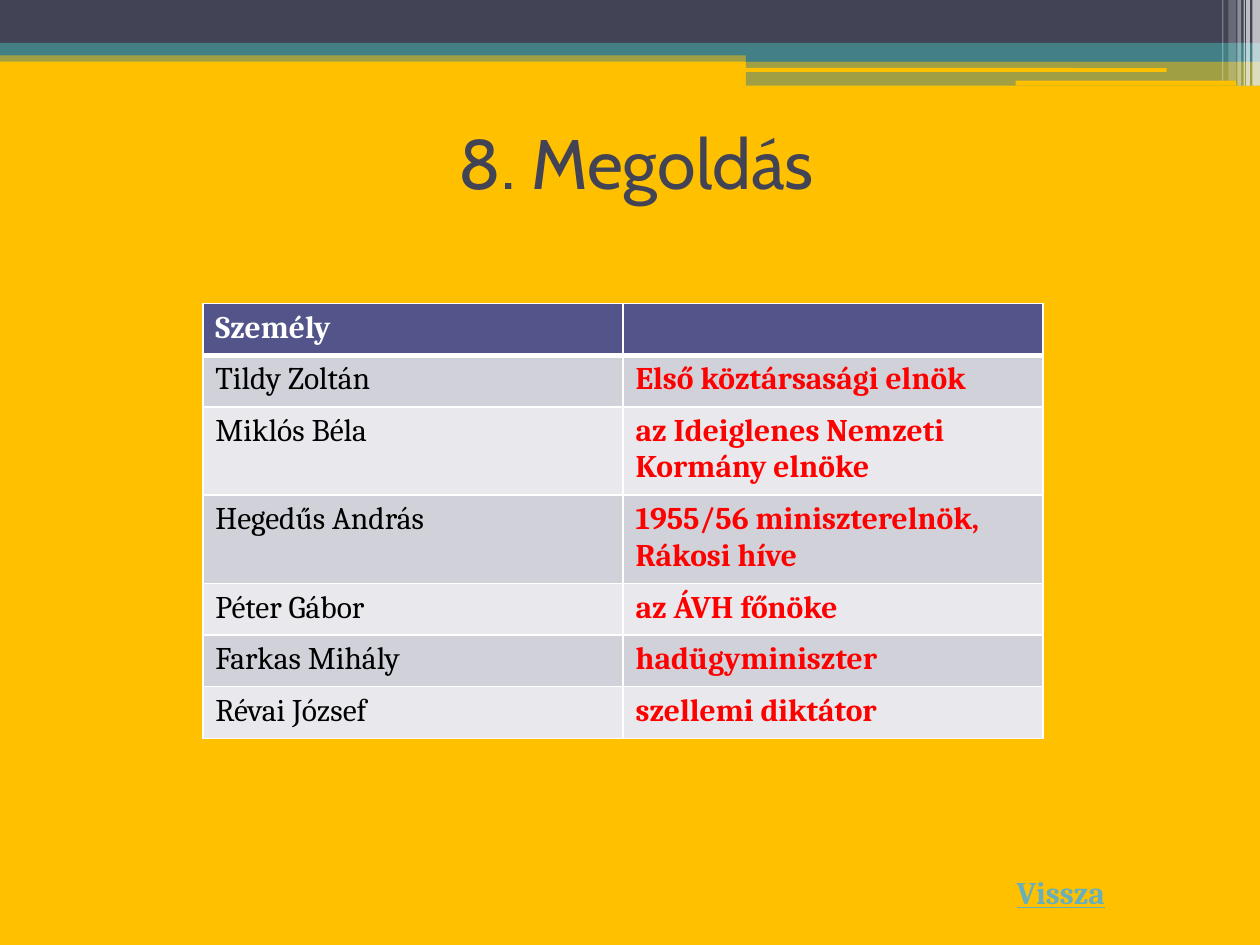
from lxml.etree import SubElement
from pptx import Presentation
from pptx.dml.color import RGBColor
from pptx.enum.shapes import MSO_SHAPE
from pptx.enum.text import MSO_ANCHOR, MSO_AUTO_SIZE, PP_ALIGN
from pptx.oxml.ns import qn
from pptx.util import Inches, Pt

DARK, TEAL, GOLD, WHITE = "424456", "438086", "FFC000", "FFFFFF"
BANDS = [
    (0, 0.4, 10, 0.09, TEAL, 50),
    (0, 0, 10, 0.34, DARK, 100),
    (0, 0.34, 10, 0.1, TEAL, 100),
    (5.92, 0.39, 4.08, 0.1, TEAL, 100),
    (5.92, 0.48, 4.08, 0.2, TEAL, 50),
]
PILLS = [(5.91, 0.54, 3.35, 0.03), (8.06, 0.64, 1.75, 0.04)]
STRIPES = [
    (9.94, 0.06, 0.68, 65),
    (9.89, 0.03, 0.68, 65),
    (9.87, 0.01, 0.68, 60),
    (9.82, 0.03, 0.68, 40),
    (9.75, 0.06, 0.64, 20),
    (9.7, 0.01, 0.64, 30),
]
ROWS = [
    ("Személy", ""),
    ("Tildy Zoltán", "Első köztársasági elnök"),
    ("Miklós Béla", "az Ideiglenes Nemzeti Kormány elnöke"),
    ("Hegedűs András", "1955/56 miniszterelnök, Rákosi híve"),
    ("Péter Gábor", "az ÁVH főnöke"),
    ("Farkas Mihály", "hadügyminiszter"),
    ("Révai József", "szellemi diktátor"),
]


def paint(fill, color, alpha=100):
    fill.solid()
    fill.fore_color.rgb = RGBColor.from_string(color)
    if alpha < 100:
        tint = fill._xPr.find(qn("a:solidFill"))[0]
        SubElement(tint, qn("a:alpha"), val=str(alpha * 1000))


def style(font, color, **form):
    for key, value in form.items():
        setattr(font, key, value)
    font.color.rgb = RGBColor.from_string(color)


def write(frame, text, color, **form):
    para = frame.paragraphs[0]
    run = para.add_run()
    run.text = text
    style(run.font, color, **form)
    return para


def block(slide, box, color, alpha=100, kind=MSO_SHAPE.RECTANGLE):
    shape = slide.shapes.add_shape(kind, *map(Inches, box))
    shape.shadow.inherit = False
    paint(shape.fill, color, alpha)
    shape.line.fill.background()


def banner(slide, left, top):
    for x, y, wide, high, color, alpha in BANDS:
        block(slide, (left + x, top + y, wide, high), color, alpha)
    for x, y, wide, high in PILLS:
        box = (left + x, top + y, wide, high)
        block(slide, box, GOLD, kind=MSO_SHAPE.ROUNDED_RECTANGLE)
    for x, wide, high, alpha in STRIPES:
        block(slide, (left + x, top, wide, high), WHITE, alpha)


def title(slide, box):
    frame = slide.shapes.add_textbox(*map(Inches, box)).text_frame
    frame.word_wrap = True
    frame.vertical_anchor = MSO_ANCHOR.MIDDLE
    para = write(frame, "8. Megoldás", DARK, name="Cabin", size=Pt(40))
    para.alignment = PP_ALIGN.CENTER


def back(slide, box):
    frame = slide.shapes.add_textbox(*map(Inches, box)).text_frame
    frame.word_wrap = False
    frame.auto_size = MSO_AUTO_SIZE.SHAPE_TO_FIT_TEXT
    write(frame, "Vissza", "67AFBD", name="Cambria", size=Pt(18),
          bold=True, underline=True)


def edge(cell, sides):
    props = cell._tc.get_or_add_tcPr()
    for spot, (side, width) in enumerate(sides.items()):
        line = SubElement(props, qn(f"a:ln{side}"), w=str(Pt(width)))
        fill = SubElement(line, qn("a:solidFill"))
        SubElement(fill, qn("a:srgbClr"), val=WHITE)
        props.insert(spot, line)


def grid(slide, box):
    frame = slide.shapes.add_table(len(ROWS), 2, *map(Inches, box))
    table = frame.table
    for r, texts in enumerate(ROWS):
        table.rows[r].height = Inches(0.41)
        for c, text in enumerate(texts):
            cell = table.cell(r, c)
            head = r == 0
            paint(cell.fill, "53548A" if head else ("E9E9ED", "D1D1DA")[r % 2])
            edge(cell, {"L": 1, "R": 1, "T": 3 if r == 1 else 1,
                        "B": 3 if head else 1})
            if text:
                color = WHITE if head else ("000000", "FF0000")[c]
                write(cell.text_frame, text, color, name="Cambria",
                      size=Pt(18), bold=head or c == 1)
    frame.height = Inches(box[3])


def main():
    deck = Presentation()
    deck.slide_width, deck.slide_height = Inches(10), Inches(7.5)
    slide = deck.slides.add_slide(deck.slide_layouts[6])
    paint(slide.background.fill, GOLD)
    banner(slide, 0, 0)
    title(slide, (0.55, 0.7, 9, 1.17))
    back(slide, (7.97, 6.88, 1.03, 0.4))
    grid(slide, (1.61, 2.41, 6.67, 3.43))
    deck.save("out.pptx")


if __name__ == "__main__":
    main()
